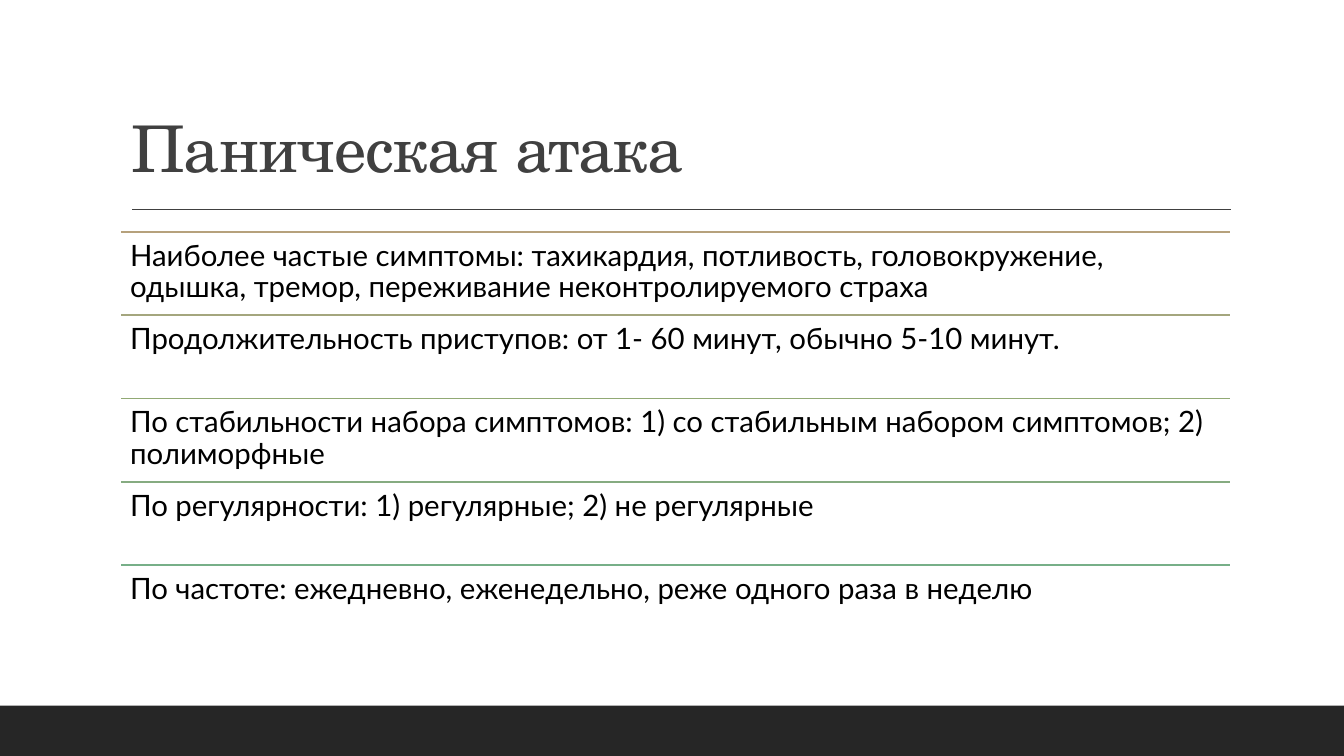
"""Build the slide on panic attacks: a title and a ruled list of features."""
from dataclasses import dataclass

import pptx
import pptx.dml.color
import pptx.enum.shapes
import pptx.enum.text
import pptx.oxml.ns
import pptx.slide
import pptx.text.text
import pptx.util
from lxml import etree
from pptx.util import Cm

COLOURS = {
    "background": "FFFFFF",
    "title": "404040",
    "body": "000000",
    "footer": "262626",
}
SLIDE_WIDTH, SLIDE_HEIGHT = 33.87, 19.05
LEFT, WIDTH = 3.05, 27.94
ROWS_TOP, ROW_HEIGHT = 5.84, 2.1
FOOTER_HEIGHT = 1.27
INSET = 0.23


@dataclass(frozen=True)
class Feature:
    """One row of the list and the colour of the rule above it."""

    text: str
    colour: str


FEATURES = [
    Feature("Наиболее частые симптомы: тахикардия, потливость, головокружение, "
            "одышка, тремор, переживание неконтролируемого страха", "B6A17C"),
    Feature("Продолжительность приступов: от 1- 60 минут, обычно 5-10 минут.", "A4A67E"),
    Feature("По стабильности набора симптомов: 1) со стабильным набором симптомов; "
            "2) полиморфные", "91A974"),
    Feature("По регулярности: 1) регулярные; 2) не регулярные", "86AB81"),
    Feature("По частоте: ежедневно, еженедельно, реже одного раза в неделю", "77AF88"),
]


def rgb(colour: str) -> pptx.dml.color.RGBColor:
    """Turn a hex string into a colour."""
    return pptx.dml.color.RGBColor.from_string(colour)


def format_paragraph(paragraph: pptx.text.text._Paragraph, font_name: str,
                     size: float, colour: str) -> None:
    """Set the font, left alignment and line spacing of a paragraph."""
    paragraph.alignment = pptx.enum.text.PP_ALIGN.LEFT
    paragraph.line_spacing = 0.9
    paragraph.font.name = font_name
    paragraph.font.size = pptx.util.Pt(size)
    paragraph.font.color.rgb = rgb(colour)


def add_rule(slide: pptx.slide.Slide, left: float, top: float, width: float,
             colour: str, weight: float) -> None:
    """Draw a horizontal line without a shadow."""
    rule = slide.shapes.add_connector(
        pptx.enum.shapes.MSO_CONNECTOR.STRAIGHT,
        Cm(left), Cm(top), Cm(left + width), Cm(top))
    rule.line.color.rgb = rgb(colour)
    rule.line.width = pptx.util.Pt(weight)
    etree.SubElement(rule._element.spPr, pptx.oxml.ns.qn("a:effectLst"))


def add_title(slide: pptx.slide.Slide, text: str) -> None:
    """Fill and place the title with the rule below it."""
    title = slide.shapes.title
    title.left, title.top = Cm(LEFT), Cm(0.79)
    title.width, title.height = Cm(WIDTH), Cm(4.04)
    frame = title.text_frame
    frame.text = text
    frame.auto_size = pptx.enum.text.MSO_AUTO_SIZE.NONE
    frame.vertical_anchor = pptx.enum.text.MSO_ANCHOR.BOTTOM
    paragraph = frame.paragraphs[0]
    format_paragraph(paragraph, "TeX Gyre Schola", 46, COLOURS["title"])
    paragraph.runs[0]._r.get_or_add_rPr().set("spc", "-50")
    add_rule(slide, 3.33, 5.28, 27.68, COLOURS["title"], 1)


def add_footer_band(slide: pptx.slide.Slide) -> None:
    """Draw the dark band along the bottom edge."""
    band = slide.shapes.add_shape(
        pptx.enum.shapes.MSO_SHAPE.RECTANGLE, 0, Cm(SLIDE_HEIGHT - FOOTER_HEIGHT),
        Cm(SLIDE_WIDTH), Cm(FOOTER_HEIGHT))
    band.shadow.inherit = False
    band.fill.solid()
    band.fill.fore_color.rgb = rgb(COLOURS["footer"])
    band.line.fill.background()


def add_feature(slide: pptx.slide.Slide, feature: Feature, top: float) -> None:
    """Draw one row: a rule and the text below it."""
    add_rule(slide, LEFT, top, WIDTH, feature.colour, 1.25)
    box = slide.shapes.add_textbox(Cm(LEFT), Cm(top), Cm(WIDTH), Cm(ROW_HEIGHT))
    frame = box.text_frame
    frame.word_wrap = True
    frame.margin_left = frame.margin_right = Cm(INSET)
    frame.margin_top = frame.margin_bottom = Cm(INSET)
    frame.text = feature.text
    format_paragraph(frame.paragraphs[0], "Lato", 21, COLOURS["body"])


def main() -> None:
    """Build and save the presentation."""
    presentation = pptx.Presentation()
    presentation.slide_width = Cm(SLIDE_WIDTH)
    presentation.slide_height = Cm(SLIDE_HEIGHT)
    slide = presentation.slides.add_slide(
        presentation.slide_layouts.get_by_name("Title Only"))
    slide.background.fill.solid()
    slide.background.fill.fore_color.rgb = rgb(COLOURS["background"])
    add_title(slide, "Паническая атака")
    add_footer_band(slide)
    for index, feature in enumerate(FEATURES):
        add_feature(slide, feature, ROWS_TOP + index * ROW_HEIGHT)
    presentation.save("out.pptx")


if __name__ == "__main__":
    main()
